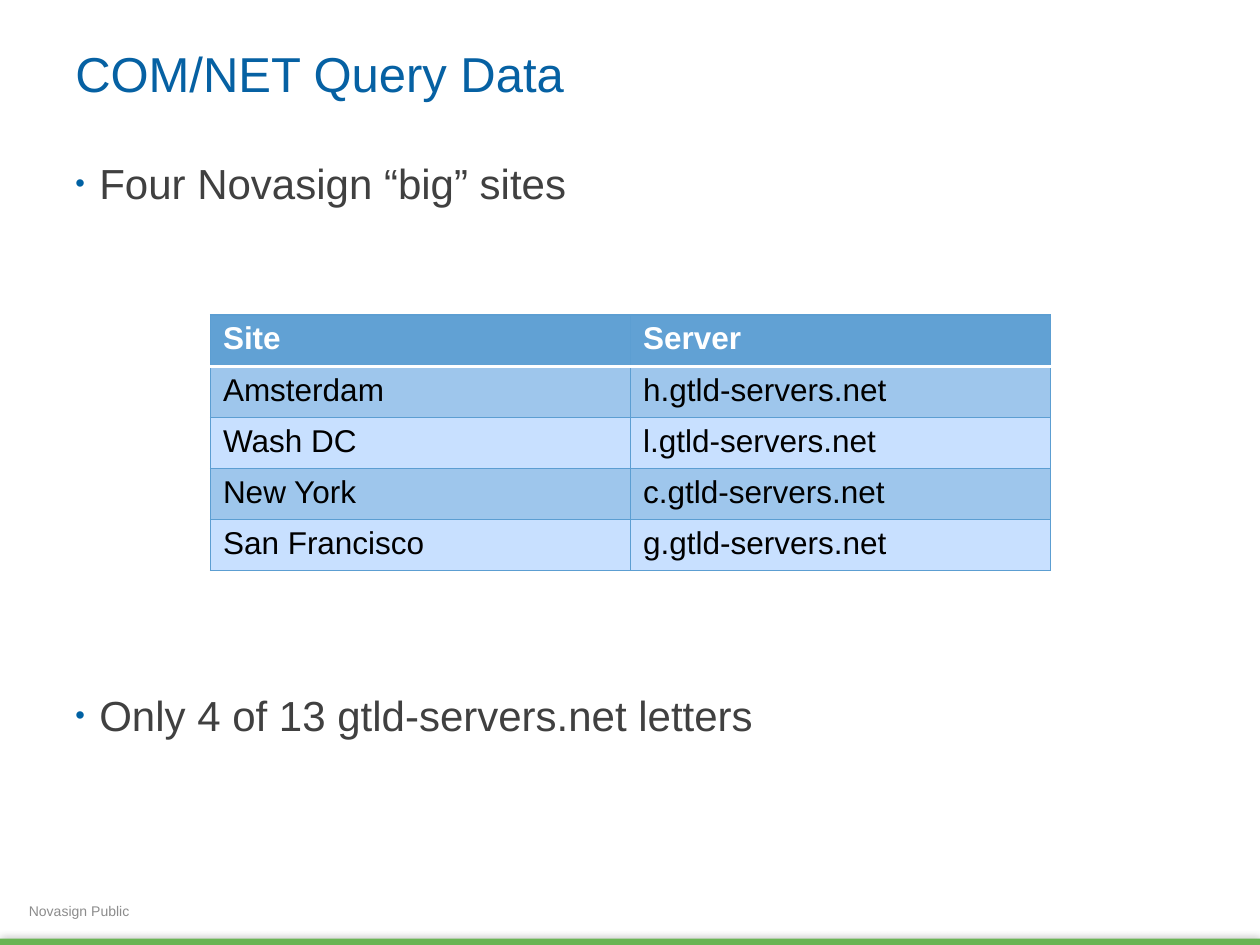
from dataclasses import dataclass

from lxml.etree import SubElement
from pptx import Presentation
from pptx.dml.color import RGBColor
from pptx.enum.shapes import MSO_SHAPE
from pptx.enum.text import MSO_ANCHOR
from pptx.oxml import parse_xml
from pptx.oxml.ns import nsdecls, qn
from pptx.util import Inches, Pt


@dataclass(frozen=True)
class Theme:
    font: str = "Arial"
    title: str = "0661A3"
    bullet: str = "0061A3"
    body: str = "404040"
    footer: str = "8C8C8C"
    bar: str = "69B453"
    header: str = "61A1D4"
    bands: tuple = ("9EC6EC", "C8E0FF")
    border: str = "5C9ED2"
    white: str = "FFFFFF"
    black: str = "000000"
    title_size: int = 28
    body_size: int = 24
    table_size: int = 18
    footer_size: int = 8


THEME = Theme()
SITES = [
    ("Site", "Server"),
    ("Amsterdam", "h.gtld-servers.net"),
    ("Wash DC", "l.gtld-servers.net"),
    ("New York", "c.gtld-servers.net"),
    ("San Francisco", "g.gtld-servers.net"),
]


def add_run(p, text, size, color, bold=False):
    r = p.add_run()
    r.text = text
    r.font.name = THEME.font
    r.font.size = Pt(size)
    r.font.bold = bold
    r.font.color.rgb = RGBColor.from_string(color)


def add_text_frame(slide, box, anchor):
    tf = slide.shapes.add_textbox(*box).text_frame
    tf.word_wrap = True
    tf.vertical_anchor = anchor
    return tf


def add_line(slide, box, text, size, color):
    tf = add_text_frame(slide, box, MSO_ANCHOR.MIDDLE)
    add_run(tf.paragraphs[0], text, size, color)


def add_bar(slide, box):
    sp = slide.shapes.add_shape(MSO_SHAPE.RECTANGLE, *box)
    sp.fill.solid()
    sp.fill.fore_color.rgb = RGBColor.from_string(THEME.bar)
    sp.line.fill.background()
    sp.shadow.inherit = False
    # Soft shadow above the bar
    effects = sp._element.spPr.find(qn("a:effectLst"))
    effects.append(parse_xml(
        f'<a:outerShdw {nsdecls("a")} blurRad="{Pt(5)}" dist="0" dir="0">'
        f'<a:srgbClr val="{THEME.black}"><a:alpha val="40000"/></a:srgbClr>'
        '</a:outerShdw>'))


def set_bullet(p):
    pPr = p._p.get_or_add_pPr()
    pPr.set("marL", str(Inches(0.19)))
    pPr.set("indent", str(-Inches(0.19)))
    color = SubElement(pPr, qn("a:buClr"))
    SubElement(color, qn("a:srgbClr"), val=THEME.bullet)
    SubElement(pPr, qn("a:buSzPct"), val="65000")
    SubElement(pPr, qn("a:buFont"), typeface=THEME.font)
    SubElement(pPr, qn("a:buChar"), char="•")


def add_bullets(slide, box, items):
    tf = add_text_frame(slide, box, MSO_ANCHOR.TOP)
    for i, (text, before) in enumerate(items):
        p = tf.add_paragraph() if i else tf.paragraphs[0]
        p.line_spacing = 1.05
        p.space_before = Pt(before)
        set_bullet(p)
        add_run(p, text, THEME.body_size, THEME.body)


def set_border(cell, edge, color, width):
    ln = SubElement(cell._tc.get_or_add_tcPr(), qn(f"a:{edge}"), w=str(Pt(width)))
    fill = SubElement(ln, qn("a:solidFill"))
    SubElement(fill, qn("a:srgbClr"), val=color)


def add_site_table(slide, box, rows):
    left, top, width, height = box
    table = slide.shapes.add_table(len(rows), len(rows[0]), *box).table
    for row in table.rows:
        row.height = height // len(rows)
    for i, values in enumerate(rows):
        is_header = i == 0
        heavy_edge = {0: "lnB", 1: "lnT"}.get(i)
        fill = THEME.header if is_header else THEME.bands[(i - 1) % 2]
        color = THEME.white if is_header else THEME.black
        for j, value in enumerate(values):
            cell = table.cell(i, j)
            # Borders come before the fill in the cell properties
            for edge in ("lnL", "lnR", "lnT", "lnB"):
                if edge == heavy_edge:
                    set_border(cell, edge, THEME.white, 2)
                else:
                    set_border(cell, edge, THEME.border, 0.75)
            cell.fill.solid()
            cell.fill.fore_color.rgb = RGBColor.from_string(fill)
            add_run(cell.text_frame.paragraphs[0], value,
                    THEME.table_size, color, is_header)


def inches(*lengths):
    return tuple(Inches(n) for n in lengths)


def main():
    prs = Presentation()
    prs.slide_width, prs.slide_height = inches(10, 7.5)
    s = prs.slides.add_slide(prs.slide_layouts[6])

    # Footer
    add_bar(s, inches(0, 7.45, 10, 0.05))
    add_line(s, inches(0.13, 7.13, 3.32, 0.2), "Novasign Public",
             THEME.footer_size, THEME.footer)

    # Bullets, with room for the table between them
    add_bullets(s, inches(0.5, 1.18, 9, 5.75), [
        ("Four Novasign “big” sites", 9),
        ("Only 4 of 13 gtld-servers.net letters", 274),
    ])

    # Title
    add_line(s, inches(0.5, 0.27, 9, 0.61), "COM/NET Query Data",
             THEME.title_size, THEME.title)

    # Table
    add_site_table(s, inches(1.67, 2.5, 6.67, 2.03), SITES)

    prs.save("out.pptx")


if __name__ == "__main__":
    main()
